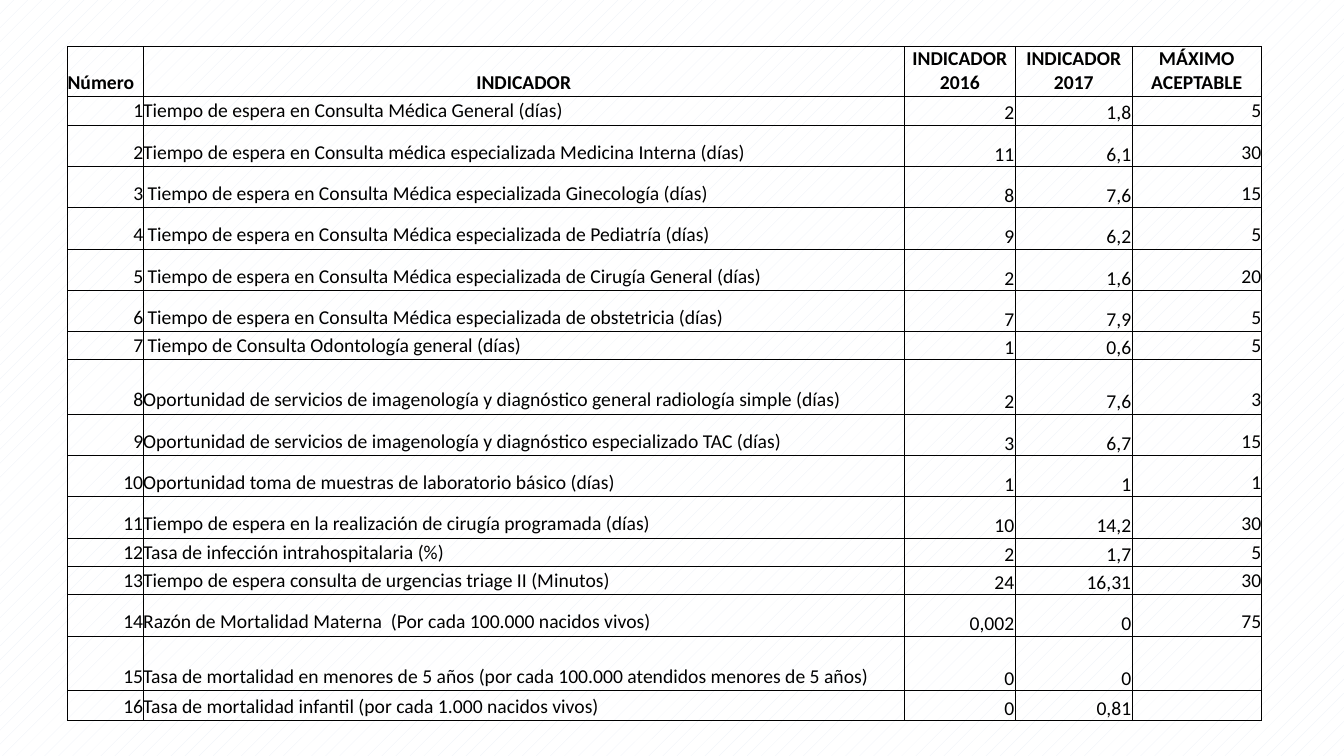
from lxml import etree
from pptx import Presentation
from pptx import util as u
from pptx.dml.color import RGBColor
from pptx.enum import dml, text
from pptx.oxml import ns

BLACK = RGBColor(0x00, 0x00, 0x00)
WHITE = RGBColor(0xFF, 0xFF, 0xFF)
PALE_BLUE = RGBColor(0xEA, 0xEF, 0xF7)
FONT = "Calibri"

COLUMN_WIDTHS = [0.75, 7.55, 1.1, 1.16, 1.28]
HEADER_HEIGHT, BASE_HEIGHT, HEIGHT_STEP = 0.5, 0.28, 0.13
YEAR_COLUMNS = (2, 3)

HEADERS = ["Número", "INDICADOR", "INDICADOR 2016", "INDICADOR 2017", "MÁXIMO ACEPTABLE"]

# Height steps above the base row, indicator, 2016, 2017, maximum
INDICATORS = [
    (0, "Tiempo de espera en Consulta Médica General (días)", "2", "1,8", "5"),
    (1, "Tiempo de espera en Consulta médica especializada Medicina Interna (días)", "11", "6,1", "30"),
    (1, " Tiempo de espera en Consulta Médica especializada Ginecología (días)", "8", "7,6", "15"),
    (1, " Tiempo de espera en Consulta Médica especializada de Pediatría (días)", "9", "6,2", "5"),
    (1, " Tiempo de espera en Consulta Médica especializada de Cirugía General (días)", "2", "1,6", "20"),
    (1, " Tiempo de espera en Consulta Médica especializada de obstetricia (días)", "7", "7,9", "5"),
    (0, " Tiempo de Consulta Odontología general (días)", "1", "0,6", "5"),
    (2, "Oportunidad de servicios de imagenología y diagnóstico general radiología simple (días)",
     "2", "7,6", "3"),
    (1, "Oportunidad de servicios de imagenología y diagnóstico especializado TAC (días)", "3", "6,7", "15"),
    (1, "Oportunidad toma de muestras de laboratorio básico (días)", "1", "1", "1"),
    (1, "Tiempo de espera en la realización de cirugía programada (días)", "10", "14,2", "30"),
    (0, "Tasa de infección intrahospitalaria (%)", "2", "1,7", "5"),
    (0, "Tiempo de espera consulta de urgencias triage II (Minutos)", "24", "16,31", "30"),
    (1, "Razón de Mortalidad Materna  (Por cada 100.000 nacidos vivos)", "0,002", "0", "75"),
    (2, "Tasa de mortalidad en menores de 5 años (por cada 100.000 atendidos menores de 5 años)",
     "0", "0", ""),
    (0, "Tasa de mortalidad infantil (por cada 1.000 nacidos vivos)", "0", "0,81", ""),
]


def add_borders(cell):
    properties = cell._tc.get_or_add_tcPr()
    for side in ("lnL", "lnR", "lnT", "lnB"):
        line = etree.SubElement(properties, ns.qn(f"a:{side}"), w=str(u.Pt(0.5)))
        fill = etree.SubElement(line, ns.qn("a:solidFill"))
        etree.SubElement(fill, ns.qn("a:srgbClr"), val=str(BLACK))


def fill_cell(cell, content, alignment, bold, margins):
    """Write one run at the bottom of the cell; margins are left, top, right, bottom."""
    add_borders(cell)
    cell.fill.background()
    cell.vertical_anchor = text.MSO_ANCHOR.BOTTOM
    cell.margin_left, cell.margin_top, cell.margin_right, cell.margin_bottom = map(u.Inches, margins)
    paragraph = cell.text_frame.paragraphs[0]
    paragraph.alignment = alignment
    run = paragraph.add_run()
    run.text = content
    run.font.name = FONT
    run.font.size = u.Pt(14)
    run.font.bold = bold
    run.font.color.rgb = BLACK


presentation = Presentation()
presentation.slide_width, presentation.slide_height = u.Inches(13.33), u.Inches(7.5)
slide = presentation.slides.add_slide(presentation.slide_layouts[6])

background = slide.background.fill
background.patterned()
background.pattern = dml.MSO_PATTERN.PERCENT_5
background.fore_color.rgb = PALE_BLUE
background.back_color.rgb = WHITE

heights = [HEADER_HEIGHT] + [BASE_HEIGHT + HEIGHT_STEP * indicator[0] for indicator in INDICATORS]
table = slide.shapes.add_table(
    len(heights), len(COLUMN_WIDTHS), u.Inches(0.67), u.Inches(0.46),
    u.Inches(sum(COLUMN_WIDTHS)), u.Inches(sum(heights))).table
table.first_row = table.horz_banding = False
for column, width in zip(table.columns, COLUMN_WIDTHS):
    column.width = u.Inches(width)
for row, height in zip(table.rows, heights):
    row.height = u.Inches(height)

rows = [HEADERS] + [[str(number), *indicator[1:]] for number, indicator in enumerate(INDICATORS, 1)]
header_alignments = [text.PP_ALIGN.LEFT] + [text.PP_ALIGN.CENTER] * 4
body_alignments = [text.PP_ALIGN.RIGHT, text.PP_ALIGN.LEFT] + [text.PP_ALIGN.RIGHT] * 3
for row_index, contents in enumerate(rows):
    is_header = row_index == 0
    alignments = header_alignments if is_header else body_alignments
    for column_index, content in enumerate(contents):
        is_year_value = not is_header and column_index in YEAR_COLUMNS
        margins = (0.01, 0.01, 0.01, 0) if is_year_value else (0, 0, 0, 0.02)
        fill_cell(table.cell(row_index, column_index), content,
                  alignments[column_index], is_header, margins)

presentation.save("out.pptx")
